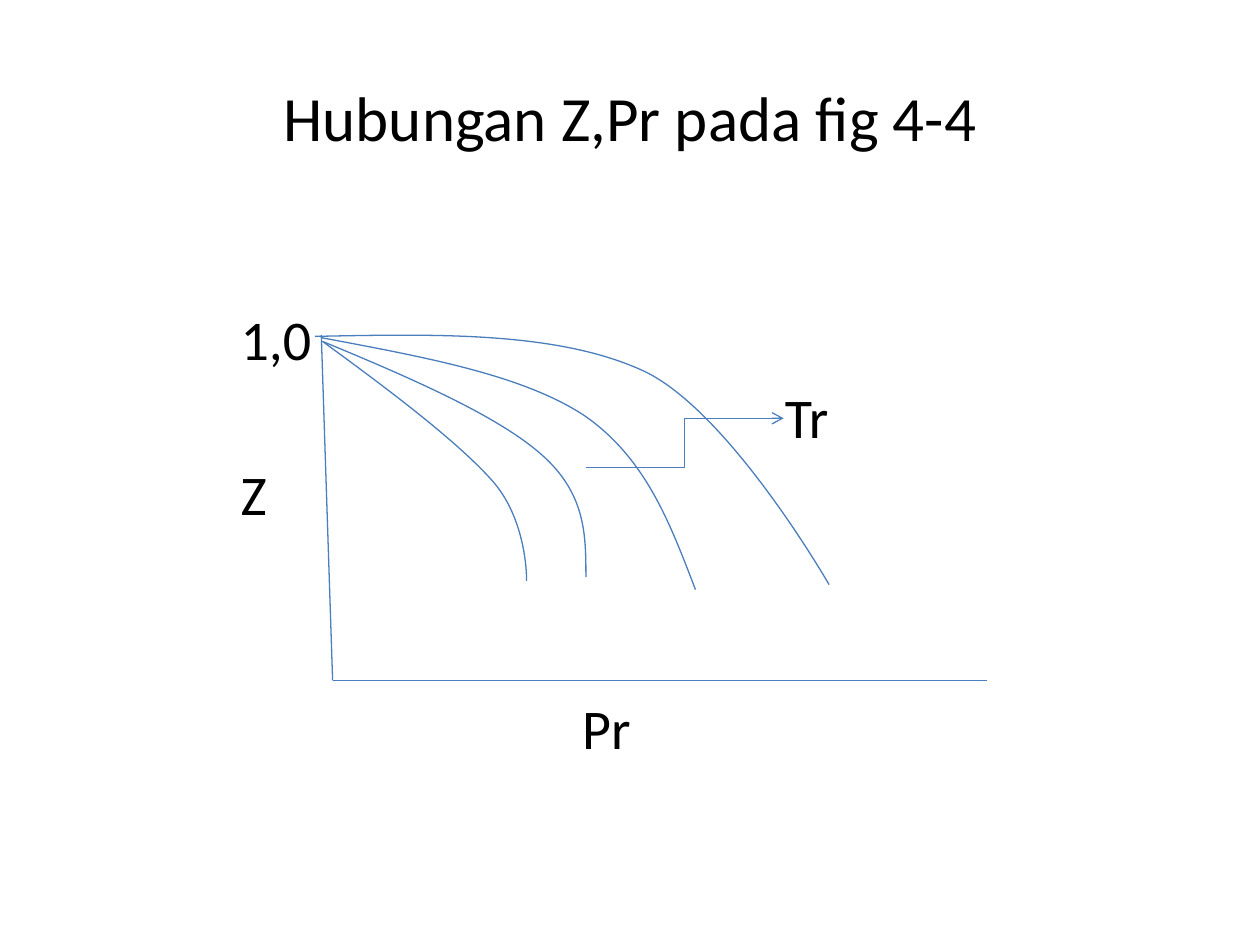
from pptx import Presentation
from pptx.dml.color import RGBColor
from pptx.enum.shapes import MSO_CONNECTOR as Link
from pptx.enum.text import (MSO_ANCHOR as Anchor, MSO_AUTO_SIZE as Fit,
                            PP_ALIGN as Align)
from pptx.oxml.ns import qn
from pptx.util import Inches, Pt
from lxml.etree import SubElement

BLACK = RGBColor(0x00, 0x00, 0x00)
BLUE = RGBColor(0x4B, 0x7E, 0xBC)

# Each Tr curve: a start point, then two Bezier arcs of three points each
CURVES = [
    [(0, .01), (.97, -.01), (1.94, -.03), (2.62, .29),
     (3.3, .62), (4.08, 1.98), (4.08, 1.98)],
    [(.05, .02), (.84, .17), (1.64, .31), (2.14, .64),
     (2.63, .98), (2.82, 1.5), (3.02, 2.02)],
    [(.06, .05), (.76, .34), (1.45, .64), (1.8, .95),
     (2.15, 1.26), (2.15, 1.59), (2.15, 1.92)],
    [(.06, .05), (.61, .45), (1.15, .86), (1.42, 1.17),
     (1.69, 1.49), (1.68, 1.95), (1.68, 1.95)],
]
TOP, ORIGIN, RIGHT = (.05, 0), (.14, 2.74), (5.33, 2.74)

# Label text, indent in inches, space before in points
LABELS = [("1,0", 1.31, 0), ("Tr", 5.63, 5.7),
          ("Z", 1.31, 5.7), ("Pr", 4.02, 95.3)]


def fit(shape, *box):
    for key, val in zip(("left", "top", "width", "height"), box):
        setattr(shape, key, Inches(val))


def style(para, size, align):
    para.alignment = align
    for run in para.runs:
        run.font.color.rgb = BLACK
        for key, val in {"name": "Calibri", "size": Pt(size)}.items():
            setattr(run.font, key, val)


def add_title(slide, *box):
    title = slide.shapes.title
    fit(title, *box)
    frame = title.text_frame
    frame.text = "Hubungan Z,Pr pada fig 4-4"
    frame.vertical_anchor = Anchor.MIDDLE
    style(frame.paragraphs[0], 36, Align.CENTER)


def add_labels(slide, *box):
    body = slide.placeholders[1]
    fit(body, *box)
    frame = body.text_frame
    frame.auto_size = Fit.NONE
    frame.margin_top = Inches(.67)
    frame.text = "\n".join(text for text, _, _ in LABELS)
    for para, (_, indent, gap) in zip(frame.paragraphs, LABELS):
        style(para, 32, Align.LEFT)
        para.space_before = Pt(gap)
        props = para._p.get_or_add_pPr()
        props.set("marL", str(Inches(indent)))
        props.set("indent", "0")
        SubElement(props, qn("a:buNone"))


def stroke(shape):
    shape.line.color.rgb = BLUE
    shape.line.width = Pt(.75)


def bend(shape):
    """Turn each three line segments into one cubic arc."""
    lines = list(shape._element.iter(qn("a:lnTo")))
    for i in range(0, len(lines), 3):
        route = lines[i].getparent()
        arc = SubElement(route, qn("a:cubicBezTo"))
        for line in lines[i:i + 3]:
            arc.append(line[0])
            route.remove(line)


def add_plot(slide, left, top):
    """Tr curves, axes and the arrow to the Tr label."""
    def place(point):
        return Inches(left + point[0]), Inches(top + point[1])

    def join(kind, start, end):
        line = slide.shapes.add_connector(kind, *place(start), *place(end))
        stroke(line)
        SubElement(line._element.spPr, qn("a:effectLst"))
        return line

    for start, *rest in CURVES:
        pen = slide.shapes.build_freeform(*place(start))
        pen.add_line_segments([place(dot) for dot in rest], close=False)
        shape = pen.convert_to_shape()
        bend(shape)
        shape.shadow.inherit = False
        shape.fill.background()
        stroke(shape)

    join(Link.STRAIGHT, TOP, ORIGIN)
    join(Link.STRAIGHT, ORIGIN, RIGHT)
    arrow = join(Link.ELBOW, (2.15, 1.05), (3.72, .66))
    SubElement(arrow.line._get_or_add_ln(), qn("a:tailEnd"), type="arrow")


def main():
    deck = Presentation()
    deck.slide_width, deck.slide_height = Inches(10), Inches(7.5)
    slide = deck.slides.add_slide(deck.slide_layouts[1])
    add_title(slide, .5, .3, 9, 1.25)
    add_labels(slide, .5, 1.75, 9, 4.95)
    add_plot(slide, 2.5, 2.66)
    deck.save("out.pptx")


if __name__ == "__main__":
    main()
